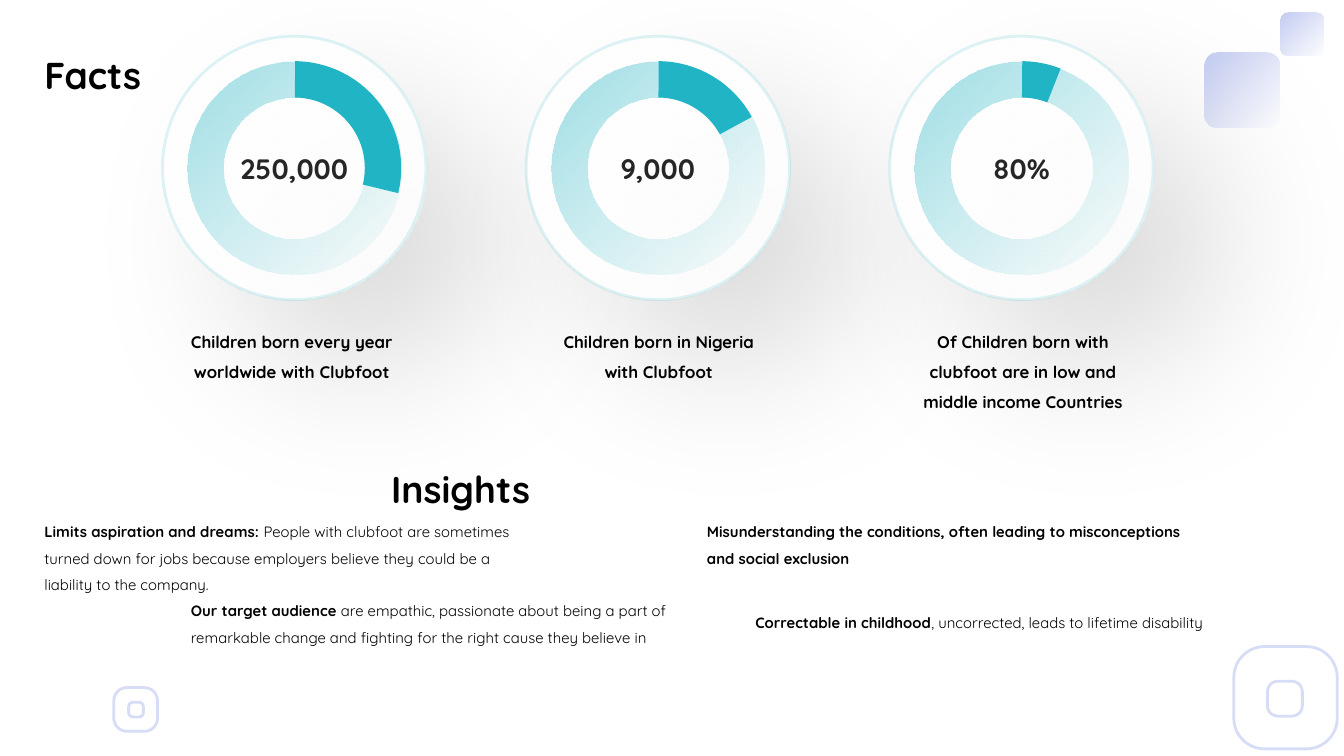
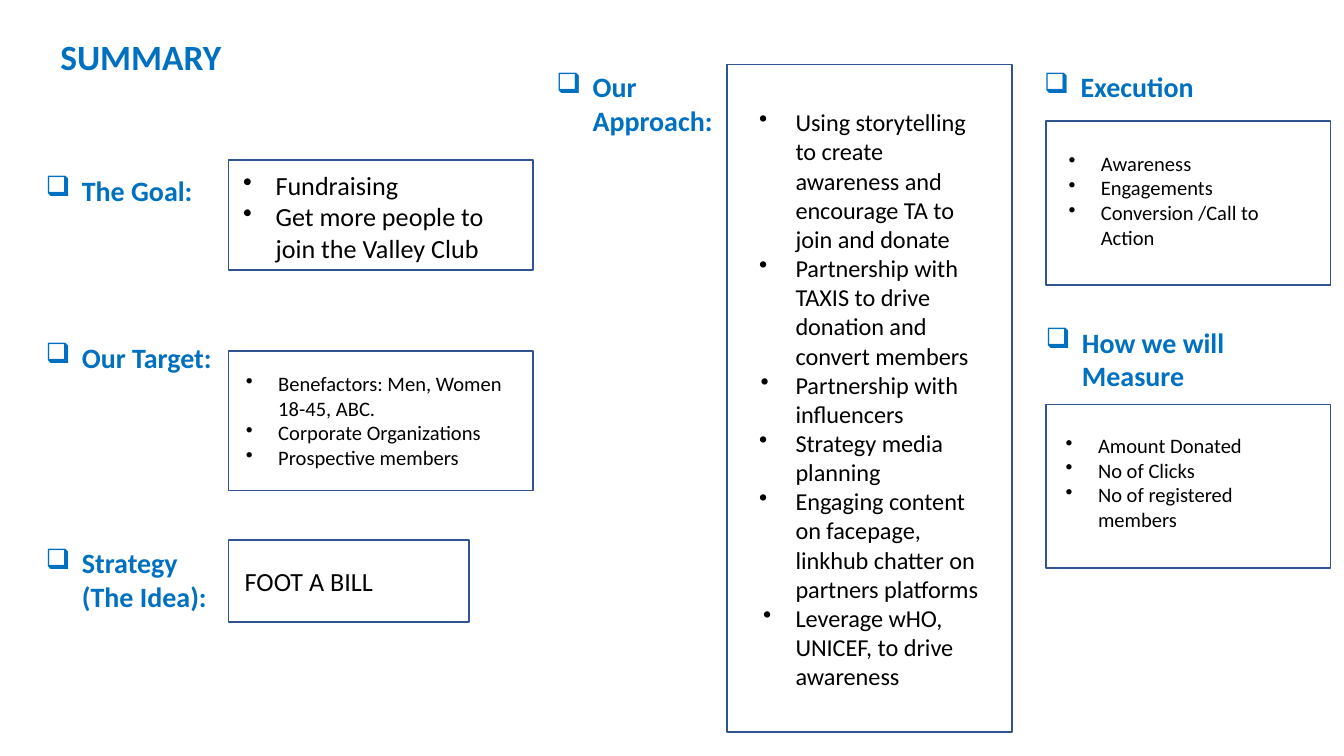
from dataclasses import dataclass
from typing import Any, NamedTuple

from lxml import etree
from pptx import Presentation
from pptx.dml.color import RGBColor
from pptx.enum.shapes import MSO_SHAPE
from pptx.enum.text import MSO_ANCHOR, MSO_AUTO_SIZE, PP_ALIGN
from pptx.oxml.ns import qn
from pptx.util import Pt

OVAL = MSO_SHAPE.OVAL
DONUT = MSO_SHAPE.DONUT
ARC = MSO_SHAPE.BLOCK_ARC
RECT = MSO_SHAPE.RECTANGLE
ROUND = MSO_SHAPE.ROUNDED_RECTANGLE
LEFT, MID = PP_ALIGN.LEFT, PP_ALIGN.CENTER
TOP = MSO_ANCHOR.TOP
GROW, FIXED = MSO_AUTO_SIZE.SHAPE_TO_FIT_TEXT, MSO_AUTO_SIZE.NONE


@dataclass(frozen=True)
class Theme:
    white: str = "FFFFFF"
    black: str = "000000"
    gray: str = "262626"
    teal: str = "20B4C4"
    aqua: str = "0FAEBF"
    lilac: str = "687EDE"
    blue: str = "0070C0"
    navy: str = "31538F"
    quick: str = "Quicksand"
    plain: str = "Calibri"
    title: float = 20
    count: float = 15
    label: float = 9
    body: float = 8
    banner: float = 19
    head: float = 15
    large: float = 14
    mid: float = 13
    small: float = 11


THEME = Theme()


class Box(NamedTuple):
    x: float
    y: float
    w: float
    h: float


class Look(NamedTuple):
    face: str
    size: float
    color: str
    bold: bool = False
    space: float = 1.0
    align: Any = LEFT


class Row(NamedTuple):
    text: str
    hang: float = 17.28
    lead: str = ""


class Dial(NamedTuple):
    count: str
    wide: float
    end: float
    label: str
    box: Box


class Note(NamedTuple):
    box: Box
    lead: str
    rest: str = ""


class Panel(NamedTuple):
    head: str
    spot: Box
    frame: Box
    area: Box
    size: float
    rows: tuple[Row, ...]
    inset: float = 17.28


TITLE = Look(THEME.quick, THEME.title, THEME.black, True, 1.44)
COUNT = Look(THEME.quick, THEME.count, THEME.gray, True, 1.0, MID)
LABEL = Look(THEME.quick, THEME.label, THEME.black, True, 1.5, MID)
BODY = Look(THEME.quick, THEME.body, THEME.black, False, 1.5)
BANNER = Look(THEME.plain, THEME.banner, THEME.blue, True)
HEAD = Look(THEME.plain, THEME.head, THEME.blue, True)

DIALS = (
    Dial("250,000", 75, 8.16, "Children born every year worldwide with Clubfoot",
         Box(97.2, 169.2, 118, 49)),
    Dial("9,000", 52.5, 198.86, "Children born in Nigeria with Clubfoot",
         Box(288.7, 169.2, 128.2, 32.4)),
    Dial("80%", 52.5, 174.9,
         "Of Children born with clubfoot are in low and middle income Countries",
         Box(488.2, 169.2, 119.5, 65.5)),
)
DIAL_X, DIAL_Y, DIAL_STEP = 87.12, 19.44, 194.76
DIAL_SIZE, RING_SIZE = 141.12, 114.48

NOTES = (
    Note(Box(18.72, 272.16, 275, 59), "Limits aspiration and dreams: ",
         "People with clubfoot are sometimes turned down for jobs because "
         "employers believe they could be a liability to the company."),
    Note(Box(373.68, 272.16, 275, 44),
         "Misunderstanding the conditions, often leading to misconceptions "
         "and social exclusion"),
    Note(Box(97.2, 314.64, 275, 44), "Our target audience",
         " are empathic, passionate about being a part of remarkable change "
         "and fighting for the right cause they believe in"),
    Note(Box(399.6, 321.12, 275, 15.12), "Correctable in childhood",
         ", uncorrected, leads to lifetime disability"),
)

RINGS = (Box(661, 346.4, 55.4, 54.8), Box(679, 365, 18.7, 18.7),
         Box(61, 368.4, 23.4, 23.4), Box(68.9, 376.2, 7.9, 7.9))
TILES = (Box(686, 6.5, 23, 23), Box(645.1, 28, 40.6, 40.6))

PANELS = (
    Panel("Our Approach:", Box(292.3, 34.56, 100, 41.8),
          Box(389.5, 34.56, 152.6, 357.8), Box(393.8, 54.7, 139, 322),
          THEME.mid, (
              Row("Using storytelling to create awareness and encourage TA "
                  "to join and donate", 19.44),
              Row("Partnership with TAXIS to drive donation and convert members",
                  19.44),
              Row("Partnership with influencers", 18.72),
              Row("Strategy media planning", 19.44),
              Row("Engaging content on facepage, linkhub chatter on partners "
                  "platforms", 19.44),
              Row("Leverage wHO, UNICEF, to drive awareness", 17.28)), 27.36),
    Panel("The Goal:", Box(18.72, 90, 100.8, 23.8),
          Box(122.4, 85.7, 163.4, 59), Box(125.3, 87.8, 160.6, 56.2),
          THEME.large,
          (Row("Fundraising"), Row("Get more people to join the Valley Club"))),
    Panel("Our Target:", Box(18.72, 179.3, 107.3, 23.8),
          Box(122.4, 187.9, 163.4, 74.9), Box(126.7, 195.8, 150.5, 59),
          THEME.small,
          (Row("Benefactors: Men, Women 18-45, ABC."),
           Row("Corporate Organizations"), Row("Prospective members"))),
    Panel("Strategy (The Idea):", Box(18.72, 289.4, 107.3, 41.8),
          Box(122.4, 289.4, 128.9, 43.9), Box(126, 300.2, 121.7, 22.3),
          THEME.large, (Row("FOOT A BILL", 0),)),
    Panel("Execution", Box(553.7, 34.56, 100, 23.8),
          Box(560.2, 64.8, 152.6, 87.8), Box(567.4, 77.8, 139, 59),
          THEME.small,
          (Row("Awareness"), Row("Engagements"),
           Row("Conversion /Call to Action"))),
    Panel("How we will Measure", Box(554.4, 171.4, 123.1, 41.8),
          Box(560.2, 216.7, 152.6, 87.8), Box(565.9, 229, 139, 59),
          THEME.small,
          (Row("Amount Donated"), Row("No of Clicks"),
           Row("No of registered members"))),
)


def put(item: Any, values: dict[str, Any]) -> None:
    for name, value in values.items():
        setattr(item, name, value)


def tint(code: str) -> RGBColor:
    return RGBColor.from_string(code)


def place(box: Box) -> tuple[Any, ...]:
    return tuple(Pt(side) for side in box)


def fade(node: Any, share: float) -> None:
    etree.SubElement(node, qn("a:alpha"), val=str(int(share * 1000)))


def shade(shape: Any, dist: float) -> None:
    effect = shape.element.spPr.find(qn("a:effectLst"))
    outer = etree.SubElement(effect, qn("a:outerShdw"), blurRad=str(Pt(85)),
                             dist=str(Pt(dist)), dir="2700000", algn="tl",
                             rotWithShape="0")
    fade(etree.SubElement(outer, qn("a:srgbClr"), val=THEME.black), 15)


def draw(slide: Any, kind: Any, box: Box, adjust: tuple[float, ...] = (),
         fill: str = "", blend: tuple[float, float] | None = None,
         line: str = "", width: float = 1.5, clear: float = 100,
         cast: float = 0) -> None:
    shape = slide.shapes.add_shape(kind, *place(box))
    shape.shadow.inherit = False
    for spot, value in enumerate(adjust):
        shape.adjustments[spot] = value
    if blend:
        shape.fill.gradient()
        shape.fill.gradient_angle = 315
        for stop in shape.fill.gradient_stops:
            stop.color.rgb = tint(fill)
        for node, share in zip(shape.element.spPr.iter(qn("a:srgbClr")), blend):
            fade(node, share)
    elif fill:
        shape.fill.solid()
        shape.fill.fore_color.rgb = tint(fill)
    else:
        shape.fill.background()
    if line:
        shape.line.color.rgb = tint(line)
        shape.line.width = Pt(width)
        if clear < 100:
            edge = shape.element.spPr.find(qn("a:ln"))
            fade(next(edge.iter(qn("a:srgbClr"))), clear)
    else:
        shape.line.fill.background()
    if cast:
        shade(shape, cast)


def mark(para: Any, sign: str, color: str, inset: float, hang: float) -> None:
    props = para._p.get_or_add_pPr()
    props.set("marL", str(Pt(inset)))
    props.set("indent", str(-Pt(hang)))
    paint = etree.SubElement(props, qn("a:buClr"))
    etree.SubElement(paint, qn("a:srgbClr"), val=color)
    etree.SubElement(props, qn("a:buChar"), char=sign)


def write(shape: Any, rows: tuple[Row, ...], look: Look, sign: str = "",
          inset: float = 0, pad: tuple[float, float] = (5.04, 2.88),
          size: Any = GROW) -> None:
    frame = shape.text_frame
    side, edge = (Pt(gap) for gap in pad)
    put(frame, {"margin_left": side, "margin_right": side, "margin_top": edge,
                "margin_bottom": edge, "word_wrap": True, "auto_size": size,
                "vertical_anchor": TOP})
    for spot, row in enumerate(rows):
        para = frame.add_paragraph() if spot else frame.paragraphs[0]
        if sign and row.hang:
            mark(para, sign, look.color, inset, row.hang)
        put(para, {"alignment": look.align, "line_spacing": look.space})
        for text, bold in ((row.lead, True), (row.text, look.bold)):
            if text:
                run = para.add_run()
                run.text = text
                put(run.font, {"name": look.face, "size": Pt(look.size),
                               "bold": bold})
                run.font.color.rgb = tint(look.color)


def note(slide: Any, box: Box, rows: tuple[Row, ...], look: Look,
         sign: str = "", inset: float = 0) -> None:
    write(slide.shapes.add_textbox(*place(box)), rows, look, sign, inset)


def start(deck: Any, text: str, box: Box, look: Look, **rest: Any) -> Any:
    slide = deck.slides.add_slide(deck.slide_layouts[5])
    title = slide.shapes.title
    put(title, dict(zip(("left", "top", "width", "height"), place(box))))
    write(title, (Row(text),), look, **rest)
    return slide


def gauge(slide: Any, spot: int, dial: Dial) -> None:
    left = DIAL_X + spot * DIAL_STEP
    gap = (DIAL_SIZE - RING_SIZE) / 2
    ring = Box(left + gap, DIAL_Y + gap, RING_SIZE, RING_SIZE)
    draw(slide, OVAL, Box(left, DIAL_Y, DIAL_SIZE, DIAL_SIZE),
         fill=THEME.white, blend=(100, 90), line=THEME.teal, clear=15, cast=54)
    draw(slide, DONUT, ring, (0.17,), THEME.aqua, (40, 0))
    draw(slide, ARC, ring, (162.27, dial.end, 0.17), THEME.teal)
    middle = left + (DIAL_SIZE - dial.wide) / 2
    note(slide, Box(middle, 78.48, dial.wide, 23.76), (Row(dial.count),), COUNT)
    note(slide, dial.box, (Row(dial.label),), LABEL)


def facts(deck: Any) -> None:
    slide = start(deck, "Facts", Box(18.72, 14.4, 70.6, 29.5), TITLE)
    for spot, dial in enumerate(DIALS):
        gauge(slide, spot, dial)
    for ring in RINGS:
        draw(slide, ROUND, ring, (0.3,), line=THEME.lilac, clear=25, cast=40)
    for tile in TILES:
        draw(slide, ROUND, tile, (0.17,), THEME.lilac, (40, 0))
    note(slide, Box(204.5, 236.2, 102.2, 29.5), (Row("Insights"),), TITLE)
    for item in NOTES:
        note(slide, item.box, (Row(item.rest, lead=item.lead),), BODY)


def recap(deck: Any) -> None:
    slide = start(deck, "SUMMARY", Box(25.2, 11.5, 106.6, 53.3), BANNER,
                  pad=(7.2, 7.2), size=FIXED)
    for panel in PANELS:
        draw(slide, RECT, panel.frame, fill=THEME.white, line=THEME.navy, width=1)
        look = Look(THEME.plain, panel.size, THEME.black)
        note(slide, panel.area, panel.rows, look, "•", panel.inset)
        note(slide, panel.spot, (Row(panel.head, 19.44),), HEAD, "❑", 20.16)


def main() -> None:
    deck = Presentation()
    put(deck, {"slide_width": Pt(720), "slide_height": Pt(405)})
    facts(deck)
    recap(deck)
    deck.save("out.pptx")


if __name__ == "__main__":
    main()
